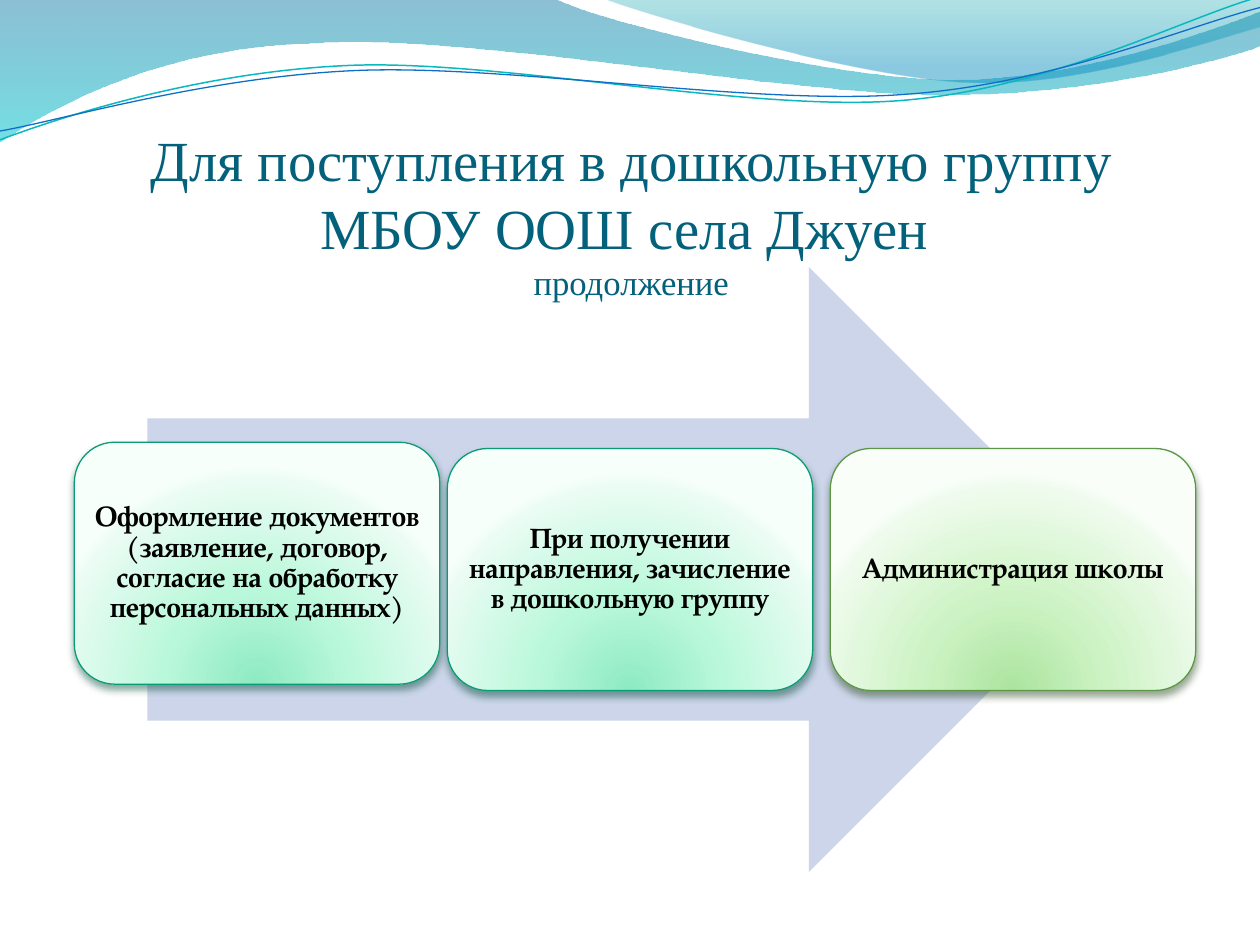
import lxml.etree
import pptx
import pptx.dml.color
import pptx.enum.shapes
import pptx.enum.text
import pptx.oxml.ns
import pptx.util

Inches = pptx.util.Inches
Pt = pptx.util.Pt
qn = pptx.oxml.ns.qn
Shapes = pptx.enum.shapes.MSO_SHAPE
Anchor = pptx.enum.text.MSO_ANCHOR

COLORS = {
    "title": "04617B", "text": "000000", "arrow": "CCD5EA",
    "wave_teal": "0AB8BF", "wave_blue": "0F6FC6",
}
MINT = {"stops": [(0, "8DEAC2"), (43, "BAF8DB"), (93, "EAFCF3"), (100, "F7FFFB")],
        "line": "0A9B74", "shadow": "044A37"}
GREEN = {"stops": [(0, "ACE49F"), (43, "CDF3C4"), (93, "EFFBED"), (100, "F9FFF8")],
         "line": "5B9747", "shadow": "2B4821"}
DOWNWARD = '<a:lin ang="5400000" scaled="0"/>'
FROM_BELOW = ('<a:path path="circle"><a:fillToRect l="50000" t="130000" '
              'r="50000" b="-30000"/></a:path>')


def rgb(value):
    return pptx.dml.color.RGBColor.from_string(value)


def element(tag, content, attributes=""):
    namespace = pptx.oxml.ns.nsdecls("a")
    return lxml.etree.fromstring(f"<a:{tag} {namespace} {attributes}>{content}</a:{tag}>")


def color_xml(value, alpha=100):
    return f'<a:srgbClr val="{value}"><a:alpha val="{alpha * 1000}"/></a:srgbClr>'


class SlideBuilder:
    heading_font = "Times New Roman"
    body_font = "TeX Gyre Pagella"

    def __init__(self, slide):
        self.slide = slide

    def gradient(self, shape, stops, direction):
        shape.fill.solid()
        content = "".join(f'<a:gs pos="{stop[0] * 1000}">{color_xml(*stop[1:])}</a:gs>'
                          for stop in stops)
        properties = shape.fill._xPr
        properties.replace(
            properties.find(qn("a:solidFill")),
            element("gradFill", f"<a:gsLst>{content}</a:gsLst>{direction}", 'rotWithShape="1"'))

    def outline(self, shape, color, width):
        shape.line.color.rgb = rgb(color)
        shape.line.width = Pt(width)

    def freeform(self, start, segments, closed):
        """Segments of 2 numbers are lines, those of 6 are cubic curves."""
        builder = self.slide.shapes.build_freeform(*map(Inches, start), scale=1.0)
        builder.add_line_segments([tuple(map(Inches, segment[-2:])) for segment in segments],
                                  close=closed)
        shape = builder.convert_to_shape()
        shape.shadow.inherit = False
        # Bend the straight segments that have control points
        lines = list(shape._element.iter(qn("a:lnTo")))
        for line, segment in zip(lines, segments):
            if len(segment) == 6:
                points = "".join(
                    f'<a:pt x="{Inches(x) - shape.left}" y="{Inches(y) - shape.top}"/>'
                    for x, y in zip(segment[::2], segment[1::2]))
                line.getparent().replace(line, element("cubicBezTo", points))
        return shape

    def ribbon(self, start, segments, stops):
        shape = self.freeform(start, segments, True)
        self.gradient(shape, stops, DOWNWARD)
        shape.line.fill.background()

    def wave(self, start, segments, color, width):
        shape = self.freeform(start, segments, False)
        shape.fill.background()
        self.outline(shape, color, width)

    def run(self, paragraph, text, font, size, color, bold=False):
        run = paragraph.add_run()
        run.text = text
        run.font.name = font
        run.font.size = Pt(size)
        run.font.bold = bold
        run.font.color.rgb = rgb(color)

    def frame(self, shape, anchor, margins):
        frame = shape.text_frame
        frame.word_wrap = True
        frame.vertical_anchor = anchor
        (frame.margin_left, frame.margin_top,
         frame.margin_right, frame.margin_bottom) = (Inches(margin) for margin in margins)
        paragraph = frame.paragraphs[0]
        paragraph.alignment = pptx.enum.text.PP_ALIGN.CENTER
        return paragraph

    def title(self, box, heading, note):
        shape = self.slide.shapes.add_textbox(*map(Inches, box))
        paragraph = self.frame(shape, Anchor.BOTTOM, (0, 0.05, 0, 0))
        self.run(paragraph, heading, self.heading_font, 32.4, COLORS["title"])
        paragraph.add_line_break()
        self.run(paragraph, note, self.heading_font, 19.8, COLORS["title"])

    def arrow(self, box):
        shape = self.slide.shapes.add_shape(Shapes.RIGHT_ARROW, *map(Inches, box))
        shape.shadow.inherit = False
        shape.fill.solid()
        shape.fill.fore_color.rgb = rgb(COLORS["arrow"])
        shape.line.fill.background()

    def card(self, left, top, text, style):
        shape = self.slide.shapes.add_shape(
            Shapes.ROUNDED_RECTANGLE, *map(Inches, (left, top, 2.9, 1.92)))
        self.gradient(shape, style["stops"], FROM_BELOW)
        self.outline(shape, style["line"], 0.75)
        shape.shadow.inherit = False
        effects = shape.fill._xPr.find(qn("a:effectLst"))
        effects.append(element(
            "outerShdw", color_xml(style["shadow"], 48),
            f'blurRad="{Pt(4.5)}" dist="{Pt(3)}" dir="5400000" rotWithShape="0"'))
        paragraph = self.frame(shape, Anchor.MIDDLE, [0.05] * 4)
        paragraph.line_spacing = 0.9
        self.run(paragraph, text, self.body_font, 16, COLORS["text"], True)


def main():
    presentation = pptx.Presentation()
    presentation.slide_width, presentation.slide_height = Inches(10), Inches(7.5)
    builder = SlideBuilder(presentation.slides.add_slide(presentation.slide_layouts[6]))

    # Ribbons and thin waves along the top edge
    builder.ribbon((0, 0), [
        (4.4, -0.01), (4.76, 0.17, 6.64, 0.63, 7.58, 0.63), (8.53, 0.63, 9.58, 0.26, 10, 0.09),
        (10.01, 0.36), (9.83, 0.44, 8.7, 0.76, 7.46, 0.75), (6.22, 0.75, 3.82, 0.28, 2.57, 0.34),
        (1.29, 0.36, 0.46, 0.83, -0.01, 1.13)], [(0, "0074A1", 45), (100, "00C6CF", 55)])
    builder.ribbon((4.79, -0.01), [
        (5.09, 0.11, 6.82, 0.62, 7.69, 0.65), (8.56, 0.69, 9.61, 0.32, 10, 0.21),
        (10, 0)], [(0, "00A1A9", 30), (80, "008BBF", 45)])
    builder.wave((0, 1.11), [
        (0.48, 0.93, 1.58, 0.57, 2.77, 0.52), (3.95, 0.47, 5.93, 0.89, 7.13, 0.8),
        (8.33, 0.71, 9.38, 0.15, 9.98, -0.02)], COLORS["wave_teal"], 0.85)
    builder.wave((0, 1.04), [
        (0.47, 0.96, 1.64, 0.61, 2.83, 0.56), (4.03, 0.51, 5.97, 0.84, 7.17, 0.75),
        (8.36, 0.67, 9.41, 0.21, 10, 0.06)], COLORS["wave_blue"], 0.75)

    # Title
    builder.title((0.51, 1.15, 9, 1.25),
                  "Для поступления в дошкольную группу МБОУ ООШ села Джуен ", "продолжение")

    # Process arrow with its three steps
    builder.arrow((1.17, 2.12, 7.65, 4.8))
    steps = [
        (0.59, 3.51, "Оформление документов (заявление, договор, согласие на обработку "
                     "персональных данных)", MINT),
        (3.55, 3.56, "При получении направления, зачисление в дошкольную группу", MINT),
        (6.59, 3.56, "Администрация школы", GREEN),
    ]
    for step in steps:
        builder.card(*step)

    presentation.save("out.pptx")


if __name__ == "__main__":
    main()
